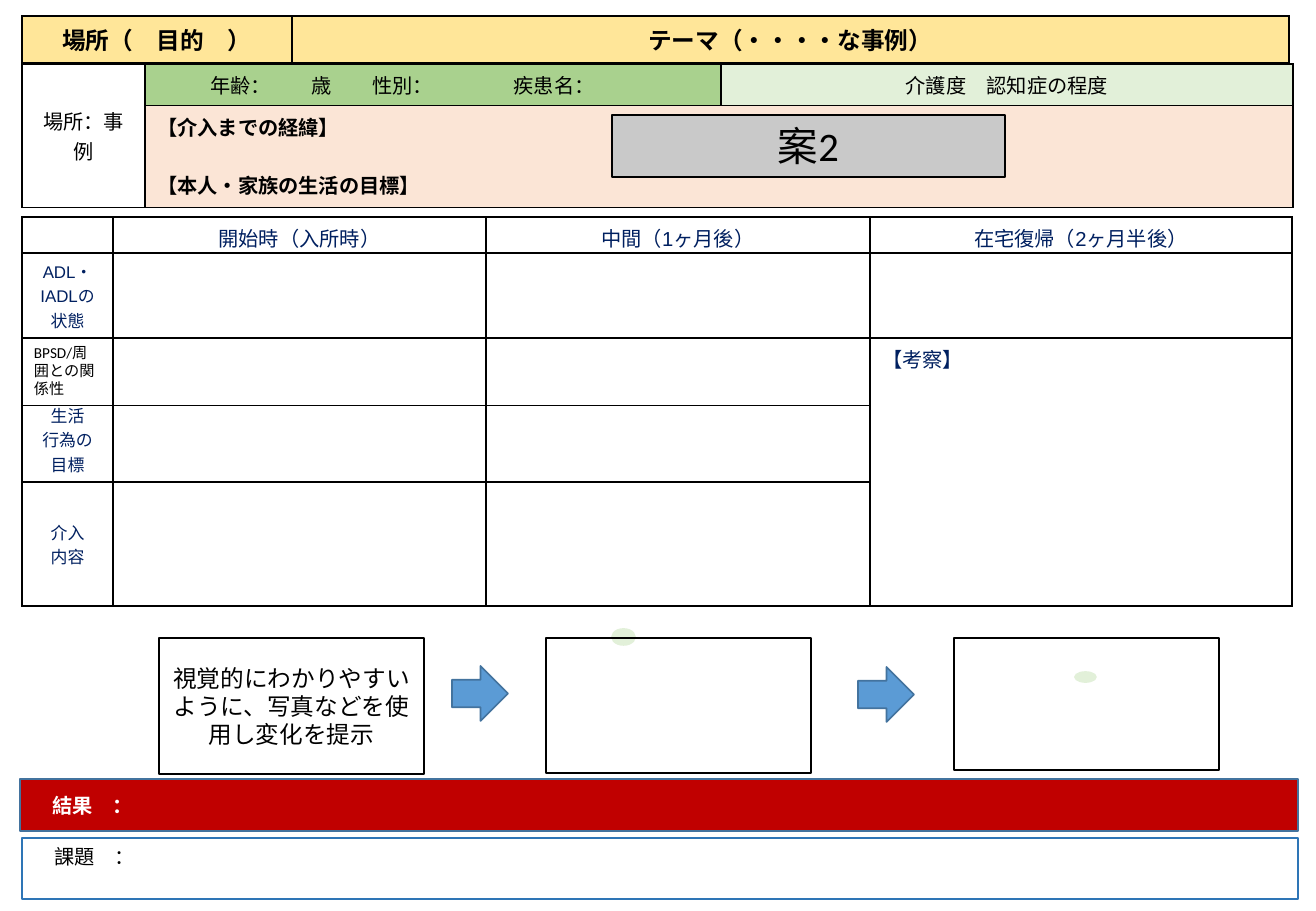
"""Build a one-page care case report form with tables, photo frames and summary bars."""
from dataclasses import dataclass
from lxml.etree import SubElement as Sub
from pptx import Presentation
from pptx.dml.color import RGBColor as RGB
from pptx.enum.shapes import MSO_CONNECTOR as LINK, MSO_SHAPE as SHAPE
from pptx.enum.text import MSO_ANCHOR as ANCHOR, PP_ALIGN as ALIGN
from pptx.oxml.ns import qn
from pptx.util import Pt

PX = 7526
SIZE = 1316, 911
LEFT, MID = ALIGN.LEFT, ALIGN.CENTER
TOP, HALF, LOW = ANCHOR.TOP, ANCHOR.MIDDLE, ANCHOR.BOTTOM


@dataclass(frozen=True)
class Theme:
    black: str = "000000"
    white: str = "FFFFFF"
    navy: str = "002060"
    red: str = "C00000"
    gold: str = "FFE699"
    green: str = "A9D18E"
    pale: str = "E2F0D9"
    peach: str = "FBE5D6"
    grey: str = "C9C9C9"
    blue: str = "5B9BD5"
    edge: str = "43739E"
    rim: str = "2E75B6"
    tiny: int = 9
    small: int = 10
    body: int = 12
    head: int = 14
    big: int = 24
    sans: str = "Calibri"
    wide: str = "Arial"


T = Theme()
PLAIN = T.sans, T.body, T.black, False
BODY = T.wide, T.body, T.black, False
BOLD = T.wide, T.body, T.black, True
HEAD = T.sans, T.head, T.black, True
NOTE = T.sans, T.head, T.black, False
NAVY = T.wide, T.body, T.navy, False
SIDE = T.wide, T.small, T.navy, False
TINY = T.sans, T.tiny, T.black, False
PLAN = T.sans, T.big, T.black, False
WHITE = T.wide, T.body, T.white, False
RESULT = T.wide, T.body, T.white, True

TABLES = [
    dict(at=(22, 64), cols=[123, 576, 572], rows=[41, 102],
         spans=[(0, 0, 1, 0), (1, 1, 1, 2)], cells={
             (0, 0): (["場所：事例"], PLAIN, MID, HALF, None),
             (0, 1): (["年齢：　　歳　　性別：　　　　疾患名：　　　"], BODY, MID, HALF, T.green),
             (0, 2): (["介護度　認知症の程度"], BODY, MID, TOP, T.pale),
             (1, 1): (["【介入までの経緯】", "【本人・家族の生活の目標】"], BOLD, LEFT, TOP, T.peach)}),
    dict(at=(22, 16), cols=[270, 997], rows=[47], spans=[], cells={
        (0, 0): (["場所（　目的　）"], HEAD, MID, TOP, T.gold),
        (0, 1): (["テーマ（・・・・な事例）"], HEAD, MID, TOP, T.gold)}),
    dict(at=(22, 217), cols=[91, 373, 384, 422], rows=[36, 85, 144, 124],
         spans=[(2, 3, 3, 3)], cells={
             (0, 1): (["開始時（入所時）"], NAVY, MID, TOP, None),
             (0, 2): (["中間（1ヶ月後）"], NAVY, MID, TOP, None),
             (0, 3): (["在宅復帰（2ヶ月半後）"], NAVY, MID, TOP, None),
             (1, 0): (["ADL・IADLの", "状態"], SIDE, MID, HALF, None),
             (2, 0): (["生活", "行為の", "目標"], SIDE, MID, LOW, None),
             (2, 3): (["【考察】"], NAVY, LEFT, TOP, None),
             (3, 0): (["介入", "内容"], SIDE, MID, HALF, None)}),
]
GOAL_GAP = 17

SHAPES = [
    (SHAPE.RECTANGLE, (20, 779, 1278, 52), T.red, T.edge, 1,
     [("　", WHITE), ("結果　：", RESULT)], LEFT, HALF),
    (SHAPE.RECTANGLE, (22, 838, 1276, 61), None, T.rim, 0.75, [("　課題　：", BODY)], LEFT, TOP),
    *[(SHAPE.RIGHT_ARROW, (x, y, 56, 55), T.blue, T.edge, 1, [], MID, HALF)
      for x, y in [(452, 666), (858, 667)]],
    *[(SHAPE.OVAL, box, T.pale, T.pale, 1, [], MID, HALF)
      for box in [(612, 629, 23, 16), (1075, 672, 21, 10)]],
    (SHAPE.RECTANGLE, (159, 638, 265, 136), None, T.black, 1,
     [("視覚的にわかりやすいように、写真などを使用し変化を提示", NOTE)], MID, HALF),
    *[(SHAPE.RECTANGLE, (x, 638, 265, high), None, T.black, 1, [], MID, HALF)
      for x, high in [(546, 135), (954, 132)]],
    (SHAPE.RECTANGLE, (612, 115, 393, 62), T.grey, T.black, 0.75, [("案2", PLAN)], MID, TOP),
]
RULE = (21, 405), (870, 405)
ASIDE = (22, 337, 90, 68), "BPSD/周囲との関係性"


def emu(nums):
    return [n * PX for n in nums]


def paint(fill, color):
    if color:
        fill.solid()
        fill.fore_color.rgb = RGB.from_string(color)
    else:
        fill.background()


def write(para, runs, align):
    para.alignment = align
    for text, (face, size, color, bold) in runs:
        run = para.add_run()
        run.text = text
        font = run.font
        font.name, font.size, font.bold = face, Pt(size), bold
        font.color.rgb = RGB.from_string(color)


def frame(cell):
    props = cell._tc.get_or_add_tcPr()
    for side in "LRTB":
        line = Sub(props, qn(f"a:ln{side}"), w=str(Pt(1)))
        Sub(Sub(line, qn("a:solidFill")), qn("a:srgbClr"), val=T.black)


def add_grid(slide, at, cols, rows, spans, cells):
    box = emu([*at, sum(cols), sum(rows)])
    grid = slide.shapes.add_table(len(rows), len(cols), *box).table
    grid.first_row = grid.horz_banding = False
    for col, wide in zip(grid.columns, cols):
        col.width = wide * PX
    for row, high in zip(grid.rows, rows):
        row.height = high * PX
    for r, c, r2, c2 in spans:
        grid.cell(r, c).merge(grid.cell(r2, c2))
    for r in range(len(rows)):
        for c in range(len(cols)):
            cell = grid.cell(r, c)
            lines, style, align, anchor, fill = cells.get((r, c), ([], SIDE, LEFT, TOP, None))
            frame(cell)
            paint(cell.fill, fill)
            cell.vertical_anchor = anchor
            if rows[r] < 40:
                cell.margin_bottom = 0
            body = cell.text_frame
            if not lines:
                end = body.paragraphs[0]._p.get_or_add_endParaRPr()
                end.set("sz", str(T.small * 100))
            for i, text in enumerate(lines):
                para = body.add_paragraph() if i else body.paragraphs[0]
                write(para, [(text, style)], align)
                if i and style == BOLD:
                    para.space_before = Pt(GOAL_GAP)


def add_item(slide, kind, box, fill, edge, width, runs, align, anchor):
    item = slide.shapes.add_shape(kind, *emu(box))
    item.shadow.inherit = False
    paint(item.fill, fill)
    item.line.color.rgb = RGB.from_string(edge)
    item.line.width = Pt(width)
    body = item.text_frame
    body.word_wrap = True
    body.vertical_anchor = anchor
    write(body.paragraphs[0], runs, align)


def main():
    deck = Presentation()
    deck.slide_width, deck.slide_height = emu(SIZE)
    slide = deck.slides.add_slide(deck.slide_layouts[6])
    for table in TABLES:
        add_grid(slide, **table)
    for item in SHAPES:
        add_item(slide, *item)
    start, end = RULE
    rule = slide.shapes.add_connector(LINK.STRAIGHT, *emu(start + end))
    rule.line.color.rgb = RGB.from_string(T.black)
    rule.line.width = Pt(0.5)
    Sub(rule._element.spPr, qn("a:effectLst"))
    box, text = ASIDE
    body = slide.shapes.add_textbox(*emu(box)).text_frame
    body.word_wrap = True
    write(body.paragraphs[0], [(text, TINY)], LEFT)
    deck.save("out.pptx")


if __name__ == "__main__":
    main()
